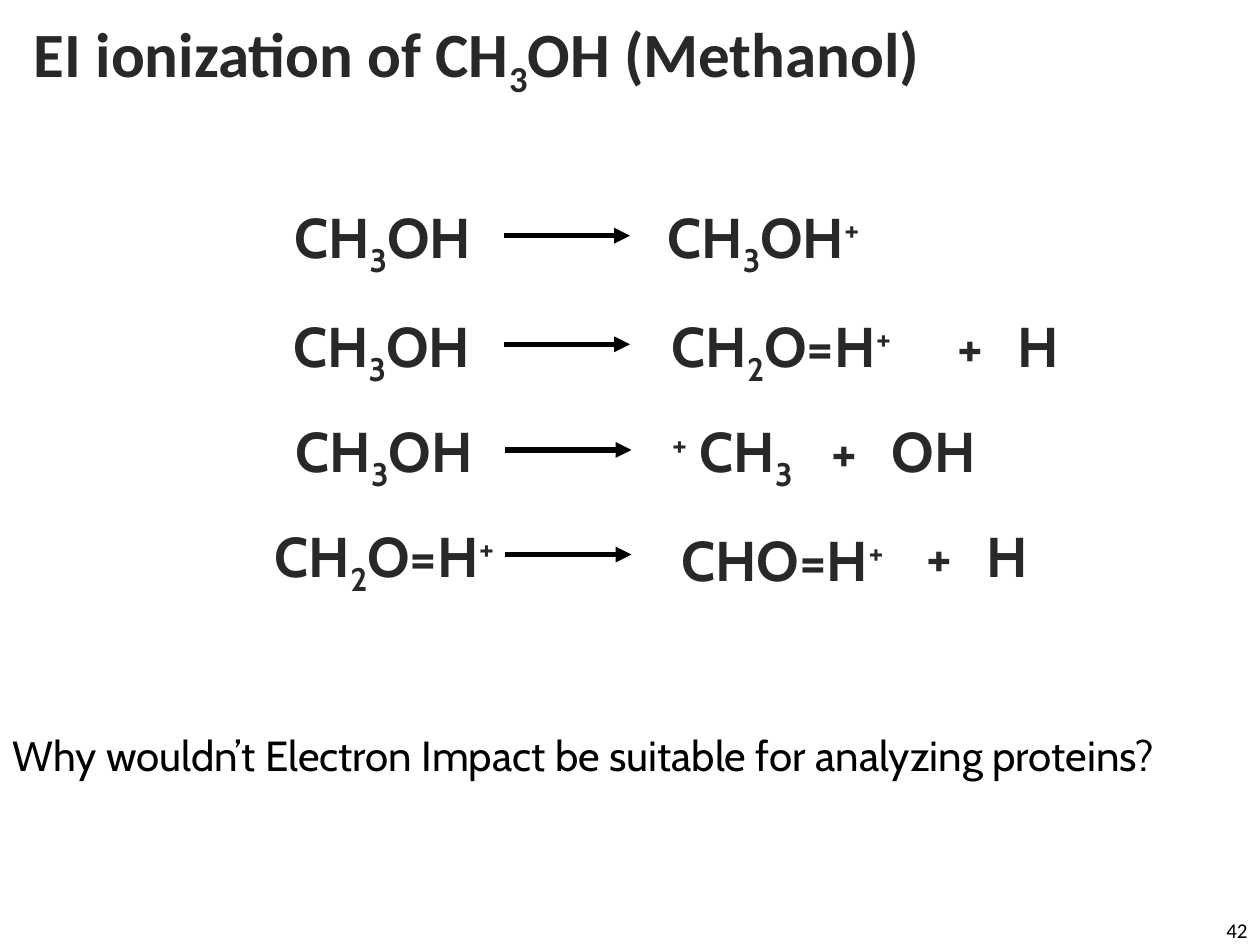
from dataclasses import dataclass
from typing import NamedTuple

from lxml.etree import SubElement as Sub
from pptx import Presentation
from pptx.dml.color import RGBColor as Rgb
from pptx.enum.shapes import MSO_CONNECTOR as Line
from pptx.enum.text import MSO_ANCHOR as Anchor, PP_ALIGN as Align
from pptx.oxml.ns import qn
from pptx.util import Cm, Pt


class Style(NamedTuple):
    font: str
    size: int
    color: str
    bold: bool = False


@dataclass(frozen=True)
class Theme:
    title: Style = Style("Calibri", 36, "282828", True)
    term: Style = Style("Cabin", 32, "282828", True)
    ask: Style = Style("Cabin", 24, "000000")
    page: Style = Style("Calibri", 12, "000000")
    arrow: str = "000000"
    weight: float = 3


class Bit(NamedTuple):
    text: str
    base: int = 0  # percent above (+) or below (-) the baseline


class Term(NamedTuple):
    bits: list[Bit]
    left: float
    width: float
    drop: float = 0


@dataclass(frozen=True)
class Step:
    top: float
    arrow: float
    terms: list[Term]
    loss: Term | None = None


THEME = Theme()
ROW = 1.6       # height of a term, cm
REACH = 2.54    # length of an arrow
MID = 0.79      # arrow below the top of its row
TAB = 1.22      # from the plus sign to the lost group

SUB3, SUB2, PLUS = Bit("3", -25), Bit("2", -25), Bit("+", 30)
ALCOHOL = [Bit("CH"), SUB3, Bit("OH")]
OXONIUM = [Bit("CH"), SUB2, Bit("O=H"), PLUS]
LOSS_H = [Bit("+\tH")]
LOSS_OH = [Bit("+\tOH")]

STEPS = [
    Step(3.96, 10.16, [Term(ALCOHOL, 5.51, 4.24),
                       Term(ALCOHOL + [PLUS], 12.9, 4.67)]),
    Step(6.15, 10.16, [Term(ALCOHOL, 5.49, 4.24), Term(OXONIUM, 12.88, 5.33)],
         Term(LOSS_H, 19.05, 2.92)),
    Step(8.28, 10.19, [Term(ALCOHOL, 5.54, 4.24),
                       Term([PLUS, Bit(" CH"), SUB3], 12.93, 3.3)],
         Term(LOSS_OH, 16.51, 3.81)),
    Step(10.39, 10.19, [Term(OXONIUM, 4.88, 5.33),
                        Term([Bit("CHO=H"), PLUS], 13.13, 4.93, 0.08)],
         Term(LOSS_H, 18.42, 2.92)),
]


def place(shape, left: float, top: float, width: float, height: float) -> None:
    shape.left, shape.top = Cm(left), Cm(top)
    shape.width, shape.height = Cm(width), Cm(height)


def write(shape, bits: list[Bit], style: Style, align=Align.LEFT,
          anchor=Anchor.TOP, wrap: bool = True):
    """Fill the first paragraph run by run and return it."""
    frame = shape.text_frame
    frame.word_wrap, frame.vertical_anchor = wrap, anchor
    para = frame.paragraphs[0]
    para.alignment, para.space_before = align, Pt(0)
    for bit in bits:
        run = para.add_run()
        run.text = bit.text
        font = run.font
        font.name, font.size, font.bold = style.font, Pt(style.size), style.bold
        font.color.rgb = Rgb.from_string(style.color)
        if bit.base:
            run._r.get_or_add_rPr().set("baseline", str(bit.base * 1000))
    return para


def add_term(slide, term: Term, top: float, loss: bool = False) -> None:
    box = slide.shapes.add_textbox(Cm(term.left), Cm(top + term.drop),
                                   Cm(term.width), Cm(ROW))
    align = Align.LEFT if loss else Align.RIGHT
    para = write(box, term.bits, THEME.term, align, wrap=loss)
    if loss:
        tabs = Sub(para._p.get_or_add_pPr(), qn("a:tabLst"))
        Sub(tabs, qn("a:tab"), pos=str(Cm(TAB)), algn="l")


def add_arrow(slide, left: float, y: float) -> None:
    arrow = slide.shapes.add_connector(Line.STRAIGHT, Cm(left), Cm(y),
                                       Cm(left + REACH), Cm(y))
    arrow.line.color.rgb = Rgb.from_string(THEME.arrow)
    arrow.line.width = Pt(THEME.weight)
    Sub(arrow.line._get_or_add_ln(), qn("a:tailEnd"), type="triangle")
    Sub(arrow._element.spPr, qn("a:effectLst"))


def add_step(slide, step: Step) -> None:
    for term in step.terms:
        add_term(slide, term, step.top)
    add_arrow(slide, step.arrow, step.top + MID)
    if step.loss:
        add_term(slide, step.loss, step.top, loss=True)


def main() -> None:
    deck = Presentation()
    deck.slide_width, deck.slide_height = Cm(25.4), Cm(19.05)
    slide = deck.slides.add_slide(deck.slide_layouts[1])

    title = slide.shapes.title
    place(title, 0.43, 0.2, 18.62, 1.9)
    write(title, [Bit("EI ionization of CH"), SUB3, Bit("OH (Methanol)")],
          THEME.title, anchor=Anchor.MIDDLE)

    for step in STEPS:
        add_step(slide, step)

    ask = slide.placeholders[1]
    place(ask, 0, 14.58, 27.3, 1.27)
    para = write(ask, [Bit("Why wouldn’t Electron Impact be suitable "
                           "for analyzing proteins?")], THEME.ask)
    props = para._p.get_or_add_pPr()
    props.set("marL", "0")
    props.set("indent", "0")
    Sub(props, qn("a:buNone"))

    page = slide.shapes.add_textbox(Cm(19.05), Cm(18.47), Cm(6.35), Cm(0.58))
    write(page, [Bit("42")], THEME.page, Align.RIGHT, Anchor.MIDDLE)

    deck.save("out.pptx")


if __name__ == "__main__":
    main()
